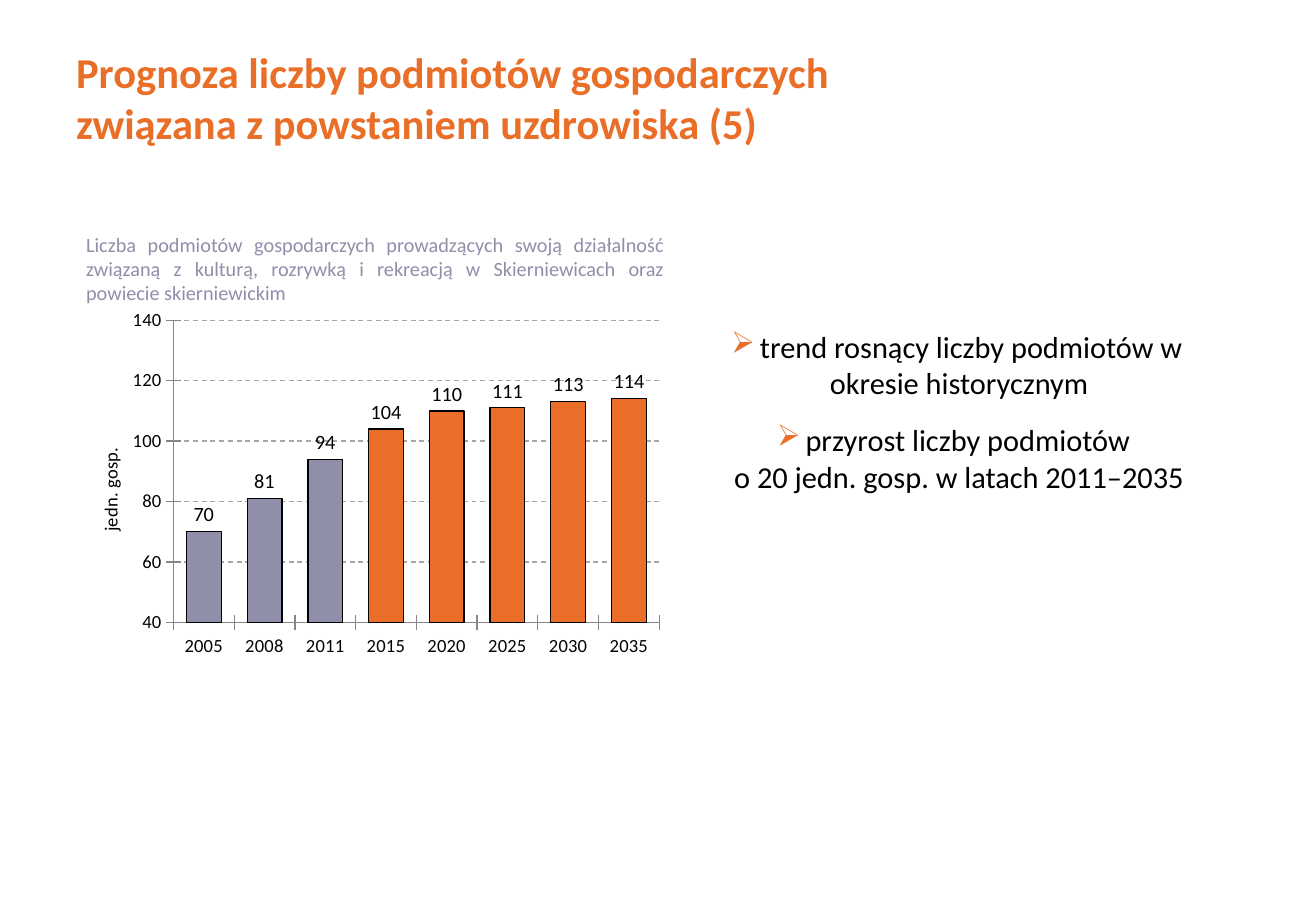
from lxml import etree
from pptx import Presentation
from pptx.chart.data import CategoryChartData
from pptx.dml.color import RGBColor
from pptx.enum.chart import XL_CHART_TYPE, XL_LABEL_POSITION, XL_TICK_MARK
from pptx.enum.dml import MSO_LINE
from pptx.enum.text import MSO_ANCHOR, PP_ALIGN
from pptx.oxml.ns import qn
from pptx.util import Pt

COLUMNS = XL_CHART_TYPE.COLUMN_CLUSTERED
OUTSIDE_END = XL_LABEL_POSITION.OUTSIDE_END
CROSS = XL_TICK_MARK.CROSS
DASH = MSO_LINE.DASH
TOP, MIDDLE = MSO_ANCHOR.TOP, MSO_ANCHOR.MIDDLE
LEFT, CENTER, JUSTIFY = PP_ALIGN.LEFT, PP_ALIGN.CENTER, PP_ALIGN.JUSTIFY
ORANGE, LAVENDER, BLACK, GRAY = "E96F28", "8F8FAA", "000000", "868686"


def set_format(font, color, **values):
    font.color.rgb = RGBColor.from_string(color)
    for name, value in {"name": "Calibri", "bold": False, **values}.items():
        setattr(font, name, value)


def set_layout(parent, position, values):
    for layout in parent.findall(qn("c:layout")):
        parent.remove(layout)
    layout = etree.Element(qn("c:layout"))
    manual = etree.SubElement(layout, qn("c:manualLayout"))
    for name, value in values.items():
        etree.SubElement(manual, qn(f"c:{name}"), val=str(value))
    parent.insert(position, layout)


presentation = Presentation()
presentation.slide_width = Pt(780)
presentation.slide_height = Pt(540)
slide = presentation.slides.add_slide(presentation.slide_layouts[6])

texts = [
    ((38, 26, 702, 62.5), MIDDLE, LEFT, None,
     {"color": ORANGE, "size": Pt(25.2), "bold": True},
     ["Prognoza liczby podmiotów gospodarczych\vzwiązana z powstaniem uzdrowiska (5)"]),
    ((44, 134, 357, 51), TOP, JUSTIFY, None,
     {"color": LAVENDER, "size": Pt(12)},
     ["Liczba podmiotów gospodarczych prowadzących swoją działalność związaną z kulturą, "
      "rozrywką i rekreacją w Skierniewicach oraz powiecie skierniewickim"]),
    ((418.5, 191, 300, 128), TOP, CENTER, "➢",
     {"color": BLACK, "size": Pt(18)},
     ["trend rosnący liczby podmiotów w okresie historycznym",
      "przyrost liczby podmiotów \vo 20 jedn. gosp. w latach 2011–2035"]),
]
for bounds, anchor, alignment, bullet, text_format, lines in texts:
    frame = slide.shapes.add_textbox(*map(Pt, bounds)).text_frame
    frame.word_wrap = True
    frame.vertical_anchor = anchor
    for index, line in enumerate(lines):
        paragraph = frame.add_paragraph() if index else frame.paragraphs[0]
        paragraph.text = line
        paragraph.alignment = alignment
        if index < len(lines) - 1:
            paragraph.space_after = Pt(12)
        if bullet:
            properties = paragraph._p.get_or_add_pPr()
            bullet_color = etree.SubElement(properties, qn("a:buClr"))
            etree.SubElement(bullet_color, qn("a:srgbClr"), val=ORANGE)
            etree.SubElement(properties, qn("a:buChar"), char=bullet)
        for run in paragraph.runs:
            set_format(run.font, **text_format)

entities = {"2005": 70, "2008": 81, "2011": 94, "2015": 104,
            "2020": 110, "2025": 111, "2030": 113, "2035": 114}
chart_data = CategoryChartData()
chart_data.categories = list(entities)
chart_data.add_series("Liczba podmiotów", list(entities.values()))
chart = slide.shapes.add_chart(COLUMNS, Pt(38), Pt(179), Pt(360), Pt(216), chart_data).chart
chart.has_legend = False
chart.has_title = False
set_format(chart.font, BLACK, size=Pt(10))
set_layout(chart._chartSpace.chart.plotArea, 0,
           {"layoutTarget": "inner", "xMode": "edge", "yMode": "edge",
            "x": 0.18, "y": 0.05, "w": 0.8, "h": 0.83})

for axis in (chart.category_axis, chart.value_axis):
    axis.major_tick_mark = CROSS
    axis.format.line.color.rgb = RGBColor.from_string(GRAY)
    axis.format.line.width = Pt(0.75)
    set_format(axis.tick_labels.font, BLACK, size=Pt(11))

value_axis = chart.value_axis
value_axis.minimum_scale = 40
value_axis.maximum_scale = 140
value_axis.major_unit = 20
gridline = value_axis.major_gridlines.format.line
gridline.color.rgb = RGBColor.from_string("A6A6A6")
gridline.width = Pt(0.75)
gridline.dash_style = DASH
axis_title = value_axis.axis_title
axis_title.text_frame.text = "jedn. gosp."
set_format(axis_title.text_frame.paragraphs[0].runs[0].font, BLACK, size=Pt(11))
set_layout(axis_title._element, 1,
           {"xMode": "edge", "yMode": "edge", "x": 0.05, "y": 0.39})

plot = chart.plots[0]
plot.gap_width = 75
plot.vary_by_categories = False
plot.has_data_labels = True
labels = plot.data_labels
labels.show_value = True
labels.number_format = "#,##0"
labels.number_format_is_linked = False
labels.position = OUTSIDE_END
set_format(labels.font, BLACK, size=Pt(12))

for index, year in enumerate(entities):
    column = plot.series[0].points[index].format
    column.fill.solid()
    column.fill.fore_color.rgb = RGBColor.from_string(LAVENDER if year <= "2011" else ORANGE)
    column.line.color.rgb = RGBColor.from_string(BLACK)
    column.line.width = Pt(0.75)

presentation.save("out.pptx")
